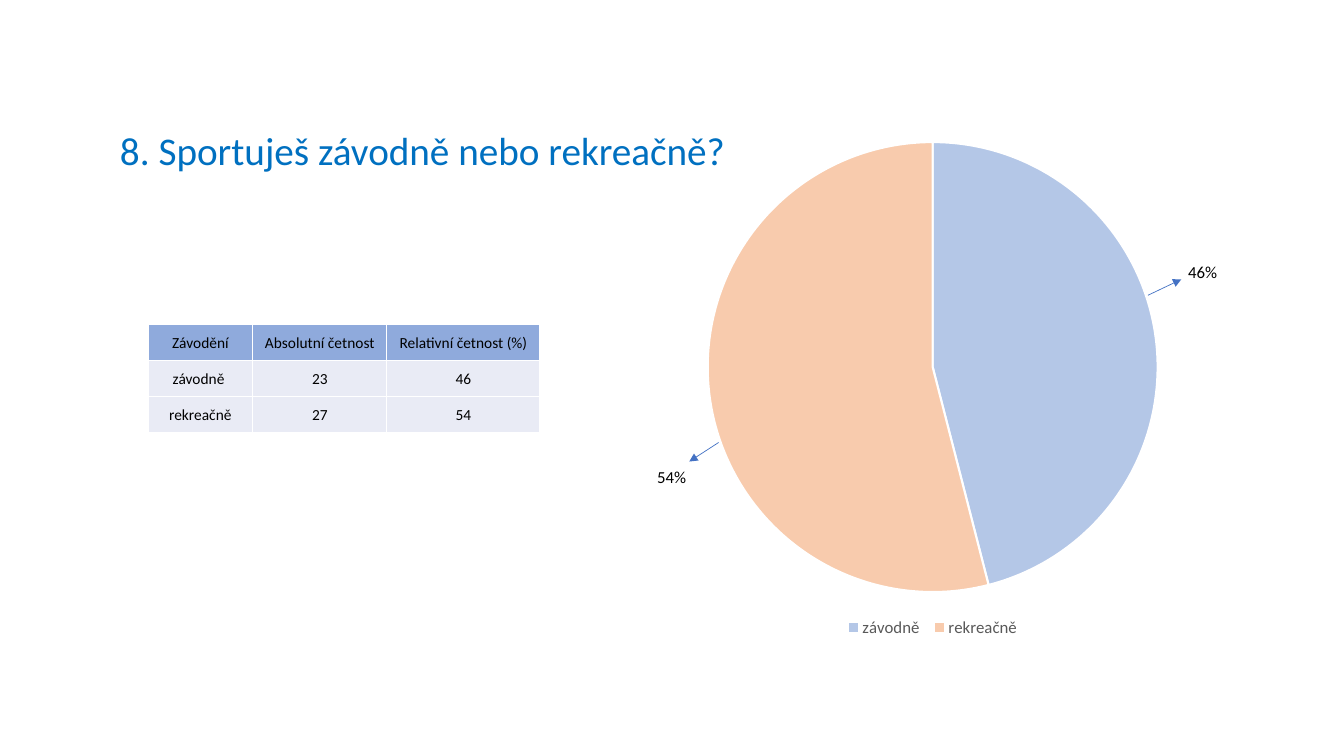
from dataclasses import dataclass

from lxml.etree import SubElement
from pptx import Presentation
from pptx.chart.data import CategoryChartData
from pptx.dml.color import RGBColor
from pptx.enum.chart import XL_CHART_TYPE, XL_LEGEND_POSITION
from pptx.enum.shapes import MSO_CONNECTOR
from pptx.enum.text import MSO_ANCHOR, MSO_AUTO_SIZE, PP_ALIGN
from pptx.oxml.ns import qn
from pptx.util import Cm, Pt


@dataclass(frozen=True)
class Theme:
    font: str = "Calibri"
    title: str = "0070C0"
    text: str = "000000"
    legend: str = "595959"
    arrow: str = "4472C4"
    header: str = "8FAADC"
    body: str = "E9EBF5"
    white: str = "FFFFFF"
    slices: tuple = ("B4C7E7", "F8CBAD")
    title_size: int = 28
    table_size: int = 11
    chart_size: int = 10
    label_size: int = 12


def rgb(value):
    return RGBColor.from_string(value)


def apply(obj, formats):
    for name, value in formats.items():
        setattr(obj, name, value)


class SlideBuilder:
    def __init__(self, prs, theme):
        self.theme = theme
        self.s = prs.slides.add_slide(prs.slide_layouts[5])

    def style(self, font, size, color):
        apply(font, {"name": self.theme.font, "size": Pt(size), "bold": False})
        font.color.rgb = rgb(color)

    def add_text(self, tf, text, size, color, align=PP_ALIGN.LEFT):
        p = tf.paragraphs[0]
        p.alignment = align
        r = p.add_run()
        r.text = text
        self.style(r.font, size, color)
        return p

    def title(self, text, left, top, width, height):
        sp = self.s.shapes.title
        apply(sp, {"left": Cm(left), "top": Cm(top),
                   "width": Cm(width), "height": Cm(height)})
        tf = sp.text_frame
        apply(tf, {"vertical_anchor": MSO_ANCHOR.MIDDLE, "word_wrap": True})
        p = self.add_text(tf, text, self.theme.title_size, self.theme.title)
        p.line_spacing = 0.9

    def table(self, rows, left, top, widths, row_height):
        frame = self.s.shapes.add_table(
            len(rows), len(widths), Cm(left), Cm(top),
            Cm(sum(widths)), Cm(row_height * len(rows)))
        table = frame.table
        for column, width in zip(table.columns, widths):
            column.width = Cm(width)
        for i, values in enumerate(rows):
            table.rows[i].height = Cm(row_height)
            for cell, value in zip(table.rows[i].cells, values):
                apply(cell, {"vertical_anchor": MSO_ANCHOR.MIDDLE,
                             "margin_left": Cm(0.02), "margin_right": Cm(0.02),
                             "margin_top": Cm(0.02), "margin_bottom": 0})
                cell.fill.solid()
                cell.fill.fore_color.rgb = rgb(
                    self.theme.body if i else self.theme.header)
                self.add_text(cell.text_frame, value, self.theme.table_size,
                              self.theme.text, PP_ALIGN.CENTER)

    def pie(self, categories, values, left, top, width, height):
        data = CategoryChartData()
        data.categories = categories
        data.add_series("Series 1", values)
        chart = self.s.shapes.add_chart(
            XL_CHART_TYPE.PIE, Cm(left), Cm(top), Cm(width), Cm(height),
            data).chart
        apply(chart, {"has_title": False, "has_legend": True})
        self.style(chart.font, self.theme.chart_size, self.theme.text)
        apply(chart.legend, {"position": XL_LEGEND_POSITION.BOTTOM,
                             "include_in_layout": False})
        self.style(chart.legend.font, self.theme.label_size, self.theme.legend)
        plot = chart.plots[0]
        plot.vary_by_categories = True
        for i, color in enumerate(self.theme.slices):
            fmt = plot.series[0].points[i].format
            fmt.fill.solid()
            fmt.fill.fore_color.rgb = rgb(color)
            fmt.line.color.rgb = rgb(self.theme.white)
            fmt.line.width = Pt(1.5)

    def arrow(self, x1, y1, x2, y2):
        line = self.s.shapes.add_connector(
            MSO_CONNECTOR.STRAIGHT, Cm(x1), Cm(y1), Cm(x2), Cm(y2))
        line.line.color.rgb = rgb(self.theme.arrow)
        line.line.width = Pt(0.5)
        sp_pr = line._element.spPr
        SubElement(sp_pr.find(qn("a:ln")), qn("a:tailEnd"), type="triangle")
        SubElement(sp_pr, qn("a:effectLst"))

    def label(self, text, left, top):
        sp = self.s.shapes.add_textbox(Cm(left), Cm(top), Cm(1.24), Cm(0.76))
        tf = sp.text_frame
        apply(tf, {"word_wrap": False,
                   "auto_size": MSO_AUTO_SIZE.SHAPE_TO_FIT_TEXT})
        self.add_text(tf, text, self.theme.label_size, self.theme.text)


def main():
    prs = Presentation()
    apply(prs, {"slide_width": Cm(33.87), "slide_height": Cm(19.05)})
    slide = SlideBuilder(prs, Theme())

    # Question
    slide.title("8. Sportuješ závodně nebo rekreačně?", 2.77, 2.01, 29.21, 3.68)

    # Frequency table
    slide.table([("Závodění", "Absolutní četnost", "Relativní četnost (%)"),
                 ("závodně ", "23", "46"),
                 ("rekreačně", "27", "54")],
                3.73, 8.18, (2.64, 3.38, 3.86), 0.91)

    # Pie chart with its callouts
    slide.pie(("závodně ", "rekreačně"), (46, 54), 13.61, 3.23, 19.79, 12.93)
    slide.arrow(28.93, 7.44, 29.77, 7.04)
    slide.arrow(18.11, 11.15, 17.37, 11.63)
    slide.label("46%", 29.69, 6.48)
    slide.label("54%", 16.31, 11.63)

    prs.save("out.pptx")


if __name__ == "__main__":
    main()
